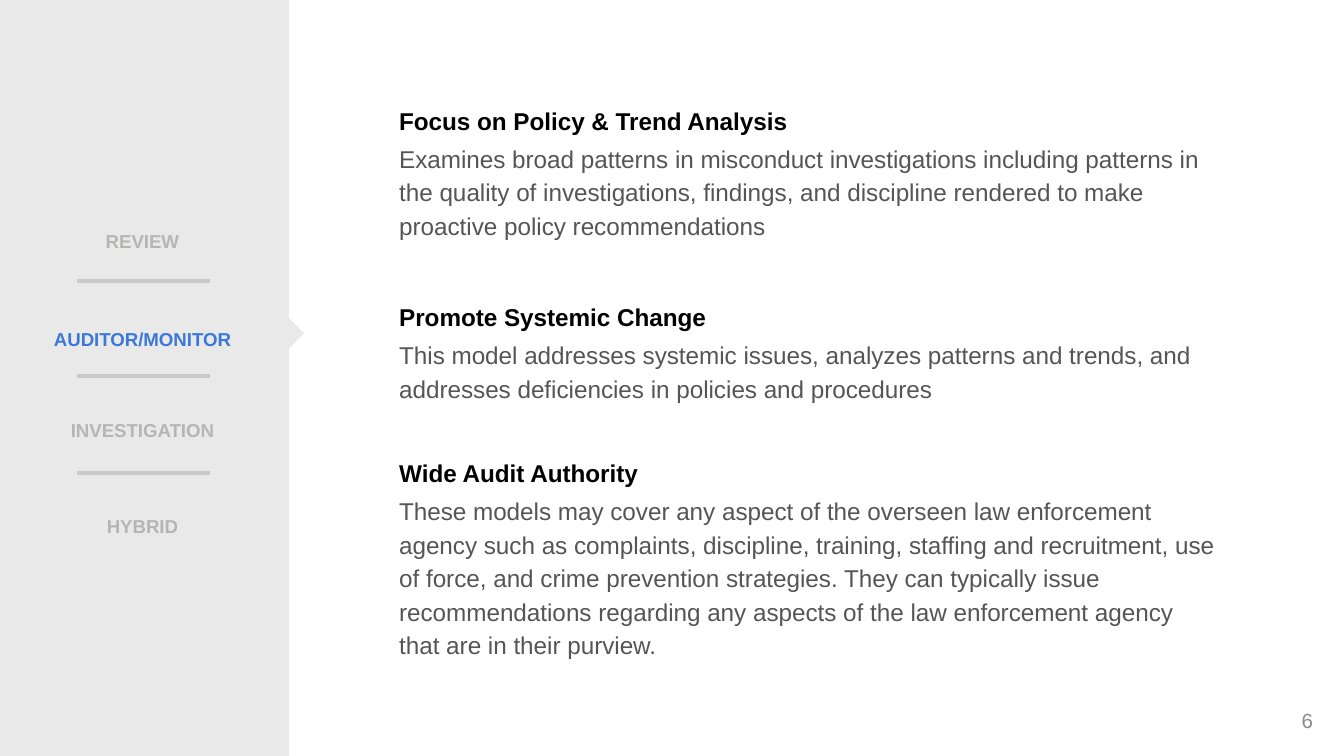
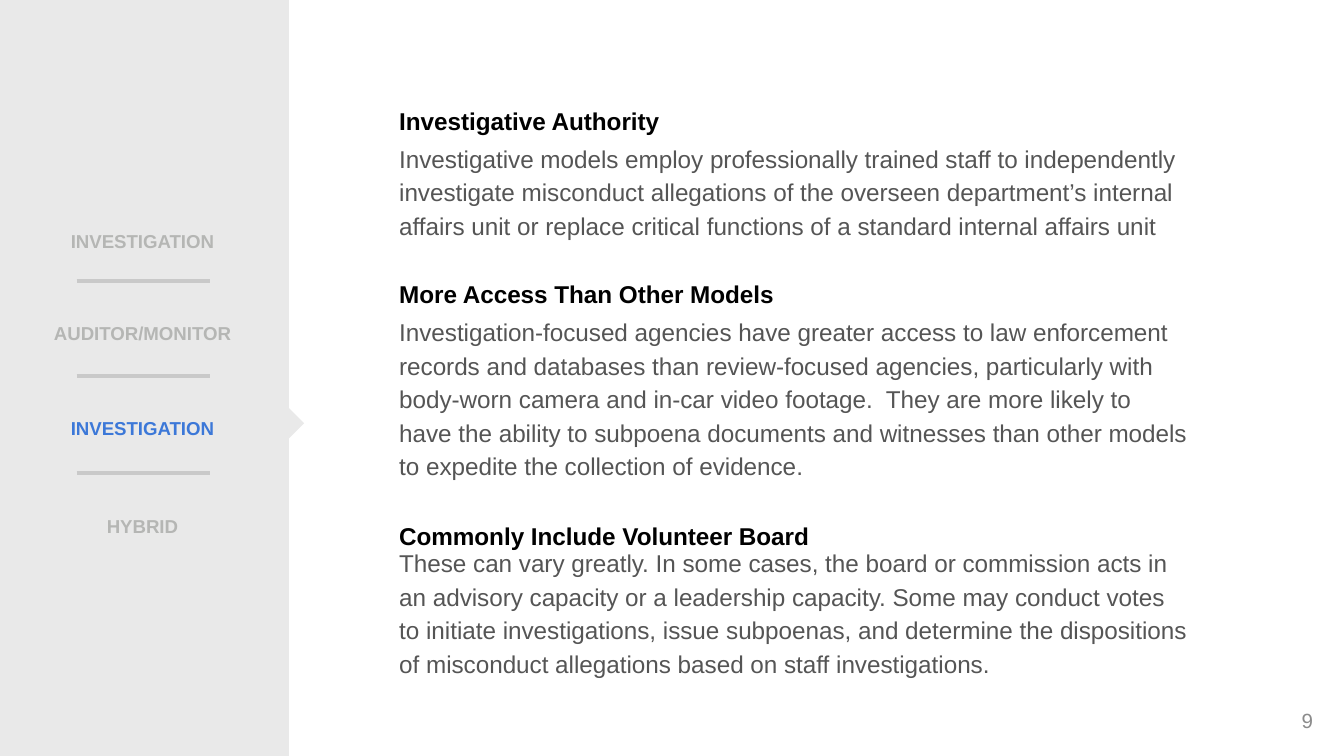
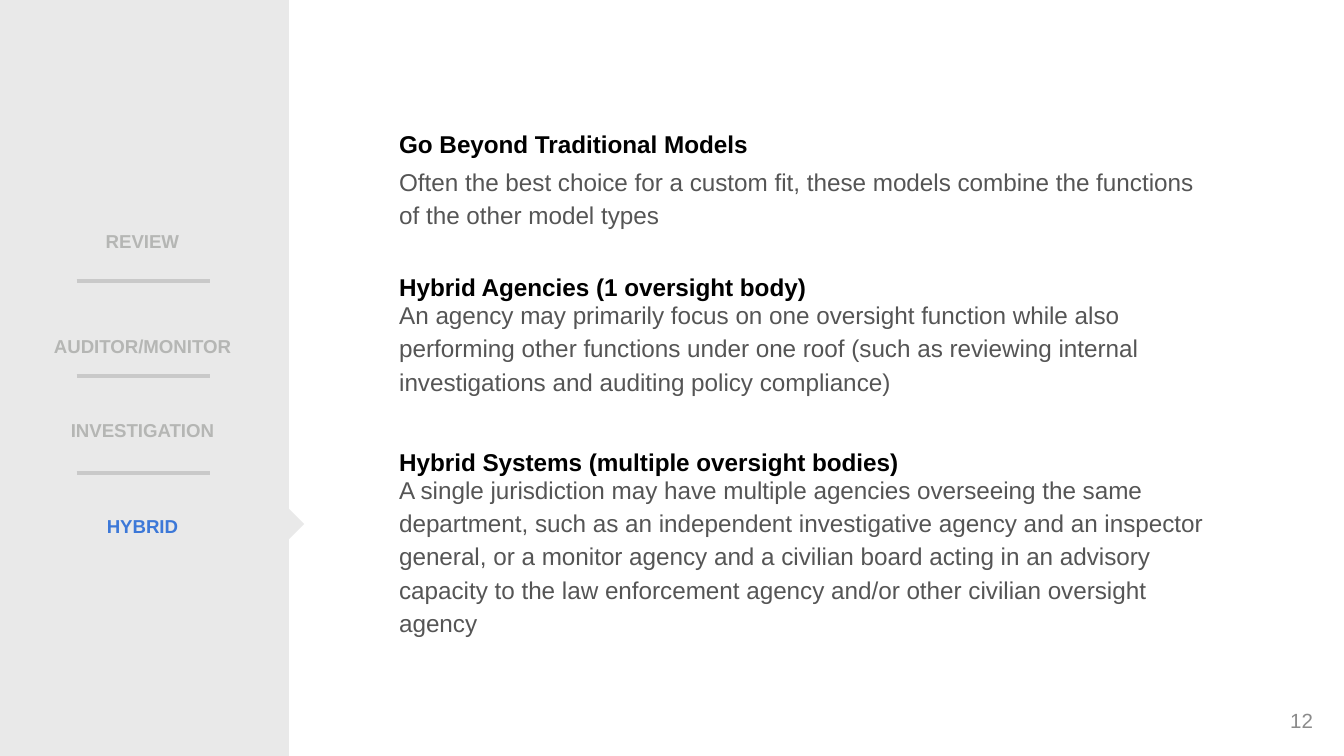
from dataclasses import dataclass

from lxml.etree import SubElement
from pptx import Presentation
from pptx.dml.color import RGBColor
from pptx.enum.shapes import MSO_CONNECTOR as Conn, MSO_SHAPE as Kind
from pptx.enum.text import MSO_ANCHOR as Anchor, MSO_AUTO_SIZE as Fit, PP_ALIGN as Align
from pptx.oxml.ns import qn
from pptx.util import Inches, Pt


@dataclass(frozen=True)
class Theme:
    font: str = "Arial"
    band: str = "E9E9E9"
    rule: str = "C9C9C9"
    idle: str = "B5B6B4"
    live: str = "3C78D8"
    head: str = "000000"
    body: str = "555555"
    page: str = "8B8B8B"
    nav_size: int = 10
    text_size: int = 13
    page_size: int = 11


T = Theme()
WIDE = 10
HIGH = WIDE * 9 / 16
BAND = 2.15
MARK = 0.16
RULES = (2.09, 2.8, 3.52)
LEFT = 2.93

# Menu entries are (label, top); sections are (top, drop to detail, detail height, heading, detail).
SLIDES = [
    dict(
        page="6", live=1, mark=2.4, width=6.16,
        menu=[("REVIEW", 1.6), ("AUDITOR/MONITOR", 2.33), ("INVESTIGATION", 3.01), ("HYBRID", 3.72)],
        parts=[
            (0.66, 0.36, 0.83, "Focus on Policy & Trend Analysis",
             "Examines broad patterns in misconduct investigations including patterns in the quality "
             "of investigations, findings, and discipline rendered to make proactive policy "
             "recommendations"),
            (2.12, 0.36, 0.67, "Promote Systemic Change",
             "This model addresses systemic issues, analyzes patterns and trends, and addresses "
             "deficiencies in policies and procedures"),
            (3.28, 0.36, 1.39, "Wide Audit Authority",
             "These models may cover any aspect of the overseen law enforcement agency such as "
             "complaints, discipline, training, staffing and recruitment, use of force, and crime "
             "prevention strategies. They can typically issue recommendations regarding any aspects "
             "of the law enforcement agency that are in their purview."),
        ],
    ),
    dict(
        page="9", live=2, mark=3.07, width=5.95,
        menu=[("INVESTIGATION", 1.6), ("AUDITOR/MONITOR", 2.29), ("INVESTIGATION", 2.99), ("HYBRID", 3.72)],
        parts=[
            (0.66, 0.36, 1.1, "Investigative Authority",
             "Investigative models employ professionally trained staff to independently investigate "
             "misconduct allegations of the overseen department’s internal affairs unit or replace "
             "critical functions of a standard internal affairs unit"),
            (1.95, 0.36, 1.41, "More Access Than Other Models",
             "Investigation-focused agencies have greater access to law enforcement records and "
             "databases than review-focused agencies, particularly with body-worn camera and in-car "
             "video footage.  They are more likely to have the ability to subpoena documents and "
             "witnesses than other models to expedite the collection of evidence."),
            (3.75, 0.28, 0.67, "Commonly Include Volunteer Board",
             "These can vary greatly. In some cases, the board or commission acts in an advisory "
             "capacity or a leadership capacity. Some may conduct votes to initiate investigations, "
             "issue subpoenas, and determine the dispositions of misconduct allegations based on "
             "staff investigations."),
        ],
    ),
    dict(
        page="12", live=3, mark=3.82, width=6.1,
        menu=[("REVIEW", 1.6), ("AUDITOR/MONITOR", 2.38), ("INVESTIGATION", 3.01), ("HYBRID", 3.72)],
        parts=[
            (0.83, 0.36, 0.67, "Go Beyond Traditional Models",
             "Often the best choice for a custom fit, these models combine the functions of the "
             "other model types"),
            (1.9, 0.28, 0.67, "Hybrid Agencies (1 oversight body)",
             "An agency may primarily focus on one oversight function while also performing other "
             "functions under one roof (such as reviewing internal investigations and auditing "
             "policy compliance)"),
            (3.2, 0.28, 1.38, "Hybrid Systems (multiple oversight bodies)",
             "A single jurisdiction may have multiple agencies overseeing the same department, such "
             "as an independent investigative agency and an inspector general, or a monitor agency "
             "and a civilian board acting in an advisory capacity to the law enforcement agency "
             "and/or other civilian oversight agency"),
        ],
    ),
]


def color(code):
    return RGBColor.from_string(code)


def write(slide, text, at, holder=None, size=T.text_size, ink=T.body, bold=False,
          align=Align.LEFT, anchor=Anchor.TOP, lead=1.0, inset=(0.04, 0.02, 0.04, 0.02)):
    """Put text in the placeholder given, or in a new text box, in front of all else."""
    spot = [Inches(n) for n in at]
    box = holder or slide.shapes.add_textbox(*spot)
    box.left, box.top, box.width, box.height = spot
    box.element.getparent().append(box.element)
    frame = box.text_frame
    frame.word_wrap, frame.auto_size = True, Fit.NONE
    frame.vertical_anchor = anchor
    frame.margin_left, frame.margin_top, frame.margin_right, frame.margin_bottom = map(Inches, inset)
    frame.text = text
    para = frame.paragraphs[0]
    props = para._p.get_or_add_pPr()
    props.set("marL", "0")
    props.set("indent", "0")
    SubElement(props, qn("a:buNone"))
    para.alignment, para.line_spacing, para.space_before = align, lead, Pt(0)
    font = para.runs[0].font
    font.name, font.size, font.bold = T.font, Pt(size), bold
    font.color.rgb = color(ink)


def block(slide, x, y, wide, high, turn=0):
    shape = slide.shapes.add_shape(Kind.RECTANGLE, *map(Inches, (x, y, wide, high)))
    shape.rotation = turn
    shape.shadow.inherit = False
    shape.fill.solid()
    shape.fill.fore_color.rgb = color(T.band)
    shape.line.fill.background()


def rule(slide, y):
    line = slide.shapes.add_connector(Conn.STRAIGHT, *map(Inches, (0.57, y, 1.56, y)))
    line.line.color.rgb = color(T.rule)
    line.line.width = Pt(2.25)
    SubElement(line.element.spPr, qn("a:effectLst"))


def sidebar(slide, data):
    """Draw the menu band; the live entry is the slide's title."""
    block(slide, 0, 0, BAND, HIGH)
    block(slide, BAND - MARK / 2, data["mark"], MARK, MARK, turn=45)
    for y in RULES:
        rule(slide, y)
    for i, (label, top) in enumerate(data["menu"]):
        live = i == data["live"]
        write(slide, label, (0.35, top, 1.46, 0.3), holder=slide.shapes.title if live else None,
              size=T.nav_size, ink=T.live if live else T.idle, bold=True, align=Align.CENTER,
              anchor=Anchor.MIDDLE, lead=1.5, inset=(0, 0.04, 0.04, 0.04))


def main():
    deck = Presentation()
    deck.slide_width, deck.slide_height = Inches(WIDE), Inches(HIGH)
    layout = deck.slide_layouts.get_by_name("Comparison")
    for data in SLIDES:
        slide = deck.slides.add_slide(layout)
        pool = iter(list(slide.placeholders)[1:])
        sidebar(slide, data)
        for top, drop, high, head, text in data["parts"]:
            write(slide, head, (LEFT, top, 4.31, 0.34), holder=next(pool, None),
                  ink=T.head, bold=True, lead=1.5)
            write(slide, text, (LEFT, top + drop, data["width"], high), holder=next(pool, None),
                  lead=1.15)
        write(slide, data["page"], (7.56, 5.21, 2.25, 0.3), size=T.page_size, ink=T.page,
              align=Align.RIGHT, anchor=Anchor.MIDDLE)
    deck.save("out.pptx")


if __name__ == "__main__":
    main()
